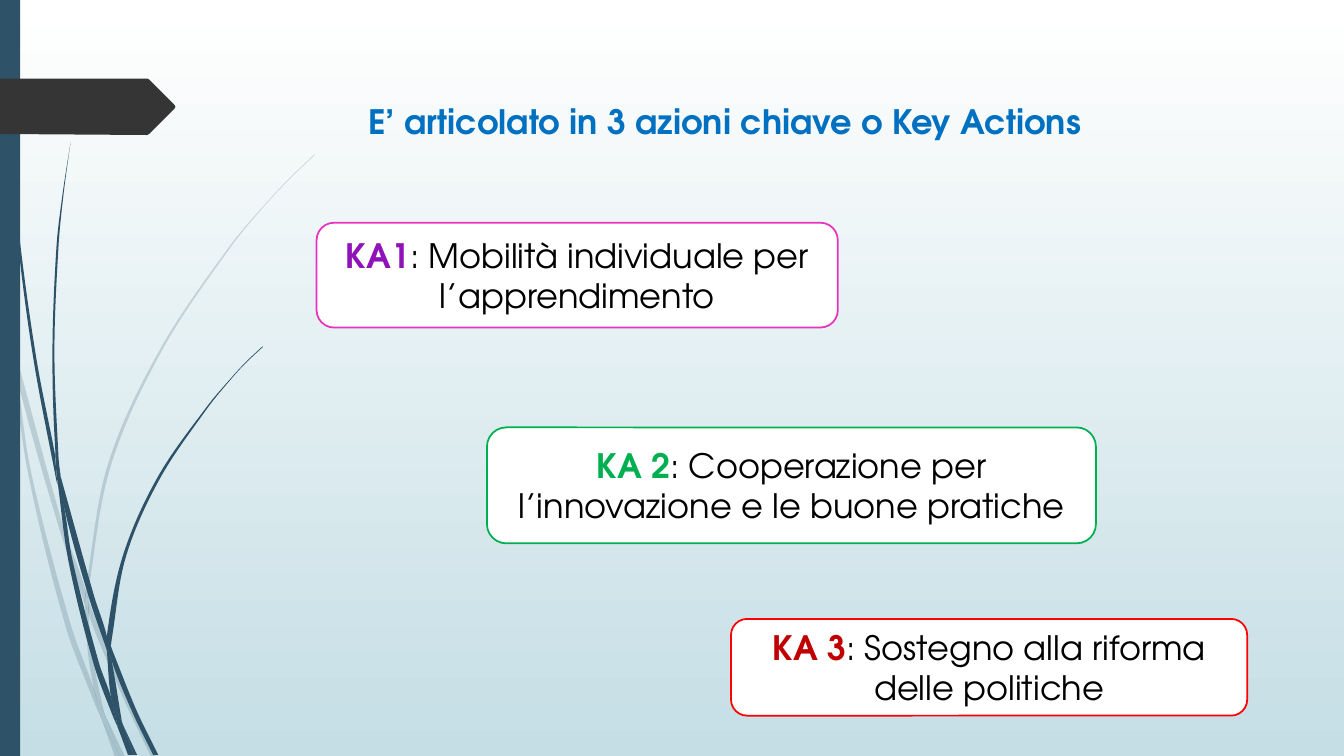
from math import hypot

from lxml.etree import SubElement
from pptx import Presentation
from pptx.dml.color import RGBColor
from pptx.enum.shapes import MSO_SHAPE
from pptx.enum.text import MSO_ANCHOR, MSO_AUTO_SIZE, PP_ALIGN
from pptx.oxml.ns import qn
from pptx.util import Inches, Pt

FONT = "TeX Gyre Adventor"
NAVY, CHARCOAL = "2E5369", "353535"
WIDTH, HEIGHT = 13.33, 7.5

# Closed outlines of the grass blades, as knots in inches
PALE_BLADES = [
    [(.11, 3.5), (.09, 3.22), (0, 2.82), (0, 2.99), (.1, 3.44)],
    [(.58, 5.22), (.84, 5.99), (.85, 5.86), (.62, 5.2), (.14, 3.45), (.17, 3.76)],
    [(.92, 6.07), (.88, 5.96), (.88, 6.1), (1.23, 6.94), (1.5, 7.51),
     (1.55, 7.51), (1.27, 6.92)],
    [(1.19, 7.51), (1.24, 7.51), (1.05, 7.11)],
    [(.93, 6.83), (.7, 6.19), (.31, 4.69), (.17, 3.76), (.11, 3.5), (.28, 4.7),
     (.65, 6.21), (.92, 6.93), (1.01, 7.14), (.99, 7.07)],
    [(.84, 5.99), (.87, 6.46), (.93, 6.83), (.96, 6.92), (1.05, 7.11),
     (1.03, 7.06), (.91, 6.46), (.88, 6.1), (.88, 6.08)],
    [(.88, 5.84), (1.1, 4.62), (1.6, 3.49), (2.29, 2.45), (2.68, 1.98),
     (2.9, 1.75), (3.12, 1.54), (3.12, 1.53), (2.89, 1.75), (2.68, 1.97),
     (2.28, 2.44), (1.58, 3.48), (1.07, 4.61), (.85, 5.84), (.85, 5.86), (.88, 5.96)],
    [(1.01, 7.14), (1.14, 7.51), (1.19, 7.51)],
    [(.88, 6.08), (.88, 6.1), (.88, 5.96), (.85, 5.86), (.84, 5.99)],
    [(.96, 6.92), (.93, 6.83), (.99, 7.07), (1.01, 7.14), (1.19, 7.51), (1.05, 7.11)],
]
DARK_BLADES = [
    [(.07, 1.1), (.17, 2.33), (.33, 3.55), (.56, 4.77), (.57, 4.81), (.55, 4.57),
     (.55, 4.53), (.36, 3.55), (.19, 2.32), (.08, 1.09), (.05, .48), (.04, 0),
     (.03, 0), (.04, .48)],
    [(.88, 5.92), (1.06, 6.45), (1.06, 6.31), (.93, 5.9), (.6, 4.72), (.64, 5.05)],
    [(1.13, 6.49), (1.1, 6.41), (1.11, 6.56), (1.32, 7.08), (1.52, 7.49),
     (1.57, 7.49), (1.36, 7.06)],
    [(1.1, 6.91), (.98, 6.57), (.72, 5.56), (.64, 5.05), (.57, 4.77), (.68, 5.57),
     (.93, 6.59), (1.11, 7.08), (1.17, 7.22), (1.16, 7.17)],
    [(.6, 4.72), (.58, 4.53), (.54, 3.49), (.58, 2.45), (.63, 1.93), (.7, 1.41),
     (.62, 1.93), (.56, 2.45), (.52, 3.49), (.55, 4.49)],
    [(1.33, 7.49), (1.36, 7.49), (1.22, 7.19)],
    [(.57, 4.77), (.64, 5.05), (.6, 4.72), (.55, 4.49), (.55, 4.53)],
    [(1.11, 6.33), (1.25, 5.52), (1.58, 4.76), (2.05, 4.06), (2.31, 3.74),
     (2.45, 3.59), (2.61, 3.44), (2.6, 3.44), (2.45, 3.58), (2.31, 3.73),
     (2.04, 4.05), (1.56, 4.74), (1.22, 5.51), (1.06, 6.31), (1.1, 6.41)],
    [(1.17, 7.22), (1.27, 7.49), (1.31, 7.49)],
    [(1.06, 6.45), (1.1, 6.91), (1.16, 7.06), (1.22, 7.19), (1.21, 7.16),
     (1.11, 6.56), (1.09, 6.51)],
    [(1.06, 6.45), (1.09, 6.51), (1.11, 6.56), (1.1, 6.41), (1.06, 6.31)],
    [(1.16, 7.06), (1.1, 6.91), (1.16, 7.17), (1.17, 7.22), (1.3, 7.49),
     (1.33, 7.49), (1.22, 7.19)],
]
ARROW = [(0, .78), (1.46, .78), (1.48, .79), (1.73, 1.04), (1.74, 1.06),
         (1.73, 1.08), (1.48, 1.33), (1.46, 1.34), (0, 1.33)]

# Box, outline colour, label colour, label, description
KEY_ACTIONS = [
    ((3.14, 2.21, 5.17, 1.04), "E833BF", "9013B9",
     "KA1", ": Mobilità individuale per l’apprendimento"),
    ((4.83, 4.24, 6.04, 1.15), "00B050", "00B050",
     "KA 2", ": Cooperazione per l’innovazione e le buone pratiche"),
    ((7.25, 6.14, 5.12, 0.96), "FF0000", "C00000",
     "KA 3", ": Sostegno alla riforma delle politiche"),
]


def color(value):
    return RGBColor.from_string(value)


def paint(shape, fill, outline=None):
    shape.shadow.inherit = False
    shape.fill.solid()
    shape.fill.fore_color.rgb = color(fill)
    if outline:
        shape.line.color.rgb = color(outline)
        shape.line.width = Pt(1.25)
    else:
        shape.line.fill.background()


def format_span(span, tint, bold):
    span.font.name = FONT
    span.font.size = Pt(24)
    span.font.bold = bold
    span.font.color.rgb = color(tint)


def add_panel(page, kind, box, fill, outline=None):
    panel = page.shapes.add_shape(kind, *map(Inches, box))
    paint(panel, fill, outline)
    return panel


def add_outline(page, knots, fill):
    corners = [(Inches(x), Inches(y)) for x, y in knots]
    builder = page.shapes.build_freeform(*corners[0])
    builder.add_line_segments(corners[1:], close=True)
    outline = builder.convert_to_shape()
    paint(outline, fill)
    return outline


def handle(before, knot, after, length):
    """Return the tangent at a knot; at a sharp corner it points to after."""
    ax, ay = knot[0] - before[0], knot[1] - before[1]
    bx, by = after[0] - knot[0], after[1] - knot[1]
    if ax * bx + ay * by > 0.8 * hypot(ax, ay) * hypot(bx, by):
        bx, by = ax + bx, ay + by
    scale = length / 3 / hypot(bx, by)
    return knot[0] + bx * scale, knot[1] + by * scale


def round_off(outline):
    """Turn the straight sides of a closed freeform into curves."""
    path = next(outline.element.iter(qn("a:path")))
    knots = [(int(pt.get("x")), int(pt.get("y"))) for pt in path.iter(qn("a:pt"))]
    for side in path.findall(qn("a:lnTo")):
        path.remove(side)
    close = path.find(qn("a:close"))
    path.remove(close)
    count = len(knots)
    for i in range(count):
        before, start, end, after = (knots[(i + k) % count] for k in (-1, 0, 1, 2))
        length = hypot(end[0] - start[0], end[1] - start[1])
        curve = SubElement(path, qn("a:cubicBezTo"))
        for x, y in (handle(before, start, end, length),
                     handle(after, end, start, length), end):
            pt = SubElement(curve, qn("a:pt"))
            pt.set("x", str(round(x)))
            pt.set("y", str(round(y)))
    path.append(close)


def add_blade(page, knots, opacity):
    blade = add_outline(page, knots, NAVY)
    round_off(blade)
    if opacity < 100:
        tint = next(blade.element.iter(qn("a:srgbClr")))
        SubElement(tint, qn("a:alpha")).set("val", str(opacity * 1000))


def add_background(page):
    fill = page.background.fill
    fill.gradient()
    fill.gradient_angle = 270
    for stop, tint, position in zip(fill.gradient_stops, ("FFFFFF", "C5DEE5"), (0, 1)):
        stop.color.rgb = color(tint)
        stop.position = position


def add_side_decoration(page):
    for blades, opacity in ((PALE_BLADES, 20), (DARK_BLADES, 100)):
        for knots in blades:
            add_blade(page, knots, opacity)
    add_panel(page, MSO_SHAPE.RECTANGLE, (0, 0, 0.2, HEIGHT), NAVY)
    add_outline(page, ARROW, CHARCOAL)


def add_title(page, box, text):
    title = page.shapes.title
    title.left, title.top, title.width, title.height = map(Inches, box)
    frame = title.text_frame
    frame.text = text
    frame.word_wrap = True
    frame.auto_size = MSO_AUTO_SIZE.NONE
    frame.vertical_anchor = MSO_ANCHOR.TOP
    para = frame.paragraphs[0]
    para.alignment = PP_ALIGN.LEFT
    format_span(para.runs[0], "0070C0", True)


def add_key_action(page, box, outline, tint, label, description):
    card = add_panel(page, MSO_SHAPE.ROUNDED_RECTANGLE, box, "FFFFFF", outline)
    frame = card.text_frame
    frame.word_wrap = True
    frame.vertical_anchor = MSO_ANCHOR.MIDDLE
    para = frame.paragraphs[0]
    para.alignment = PP_ALIGN.CENTER
    for text, shade, bold in ((label, tint, True), (description, "000000", False)):
        span = para.add_run()
        span.text = text
        format_span(span, shade, bold)


def main():
    deck = Presentation()
    deck.slide_width, deck.slide_height = Inches(WIDTH), Inches(HEIGHT)
    page = deck.slides.add_slide(deck.slide_layouts[5])
    add_background(page)
    add_side_decoration(page)
    add_title(page, (3.55, 0.95, 7.57, 0.5),
              "E’ articolato in 3 azioni chiave o Key Actions")
    for action in KEY_ACTIONS:
        add_key_action(page, *action)
    deck.save("out.pptx")


if __name__ == "__main__":
    main()
